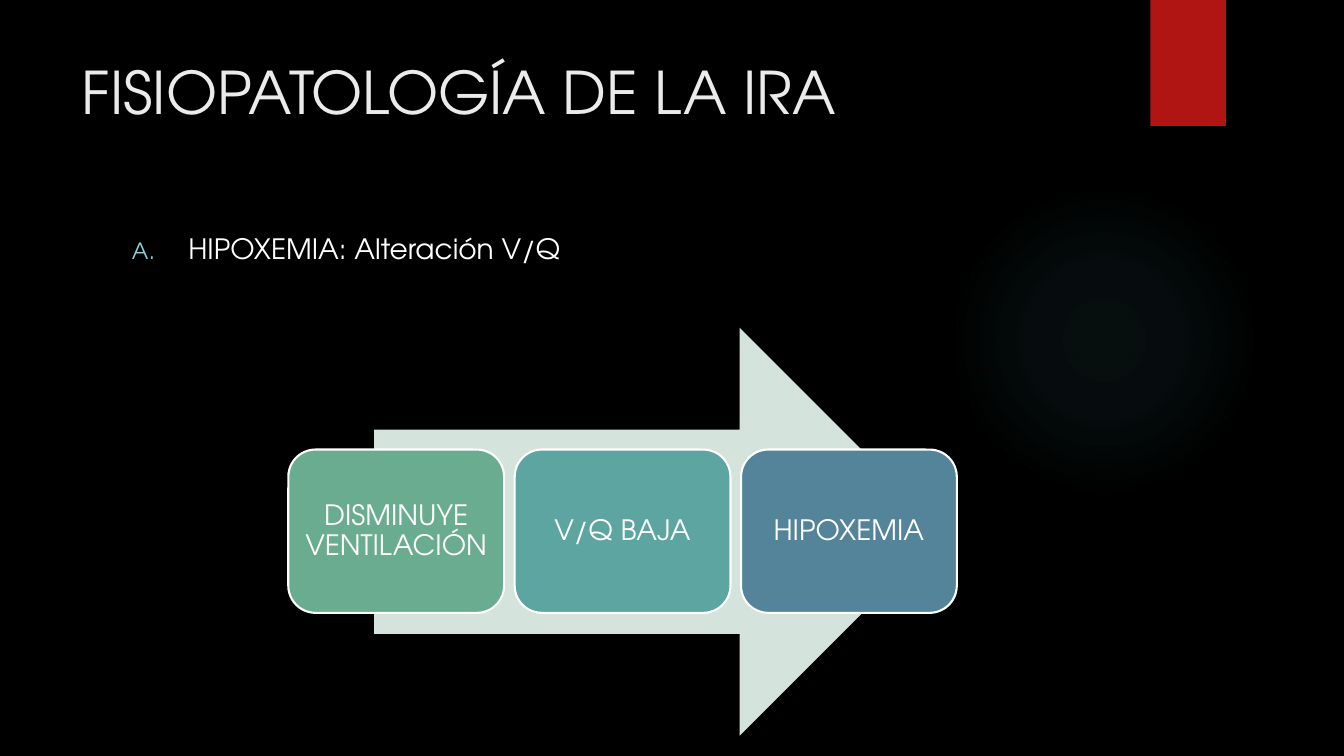
import pptx
import pptx.util
import pptx.dml.color
import pptx.enum.shapes
import pptx.enum.text
import pptx.oxml
import pptx.oxml.ns

Inches, Pt = pptx.util.Inches, pptx.util.Pt
KIND = pptx.enum.shapes.MSO_SHAPE
ALIGN = pptx.enum.text.PP_ALIGN
ANCHOR = pptx.enum.text.MSO_ANCHOR

# Content
TITLE = "FISIOPATOLOGÍA DE LA IRA"
POINT = "HIPOXEMIA: Alteración V/Q"
STEPS = [
    ("DISMINUYE VENTILACIÓN", "6AAC90"),
    ("V/Q BAJA", "5DA5A1"),
    ("HIPOXEMIA", "54849A"),
]
FONT = "TeX Gyre Adventor"
GLOW = [(0, 7), (36, 6), (69, 0)]  # stop and opacity, in percent

# Layout of the steps, in inches
LEFT, TOP, WIDE, HIGH, PITCH = 2.86, 4.46, 2.14, 1.62, 2.245


def color(code):
    return pptx.dml.color.RGBColor.from_string(code)


def parse(tag, inner="", attrs=""):
    ns = pptx.oxml.ns.nsdecls("a")
    return pptx.oxml.parse_xml(f"<a:{tag} {ns} {attrs}>{inner}</a:{tag}>")


def write(shape, text, size=20, ink="FFFFFF", align=ALIGN.LEFT,
          anchor=ANCHOR.TOP, inset=None, space=None, bullets=()):
    frame = shape.text_frame
    frame.word_wrap = True
    frame.auto_size = pptx.enum.text.MSO_AUTO_SIZE.NONE
    frame.vertical_anchor = anchor
    if inset is not None:
        frame.margin_left = frame.margin_right = Inches(inset)
        frame.margin_top = frame.margin_bottom = Inches(inset)
    para = frame.paragraphs[0]
    para.alignment = align
    if space:
        para.line_spacing = space
    props = para._p.get_or_add_pPr()
    for item in bullets:
        props.append(item)
    run = para.add_run()
    run.text = text
    run.font.name, run.font.size = FONT, Pt(size)
    run.font.color.rgb = color(ink)
    return para


def draw(slide, kind, box, fill, line=None):
    shape = slide.shapes.add_shape(kind, *map(Inches, box))
    shape.shadow.inherit = False
    shape.fill.solid()
    shape.fill.fore_color.rgb = color(fill)
    if line:
        shape.line.color.rgb = color(line)
        shape.line.width = Pt(1.5)
    else:
        shape.line.fill.background()
    return shape


def main():
    deck = pptx.Presentation()
    deck.slide_width, deck.slide_height = Inches(13.33), Inches(7.5)
    slide = deck.slides.add_slide(deck.slide_layouts[5])
    slide.background.fill.solid()
    slide.background.fill.fore_color.rgb = color("000000")

    # Soft glow and red tab
    glow = draw(slide, KIND.OVAL, (9.41, 1.83, 3.08, 3.08), "50B9C1")
    stops = "".join(
        f'<a:gs pos="{pos * 1000}"><a:srgbClr val="50B9C1">'
        f'<a:alpha val="{alpha * 1000}"/></a:srgbClr></a:gs>'
        for pos, alpha in GLOW)
    center = '<a:fillToRect l="50000" t="50000" r="50000" b="50000"/>'
    fade = parse("gradFill", f'<a:gsLst>{stops}</a:gsLst>'
                 f'<a:path path="circle">{center}</a:path>')
    props = glow._element.spPr
    props.replace(props.find(pptx.oxml.ns.qn("a:solidFill")), fade)
    draw(slide, KIND.RECTANGLE, (11.41, 0, 0.75, 1.25), "B01513")

    # Title
    title = slide.shapes.title
    title.left, title.top = Inches(0.71), Inches(0.5)
    title.width, title.height = Inches(10.29), Inches(1.53)
    write(title, TITLE, size=42, ink="EBEBEB")

    # Lettered point
    body = slide.shapes.add_textbox(*map(Inches, (1.21, 2.25, 9.78, 0.6)))
    para = write(body, POINT, bullets=[
        parse("buClr", '<a:srgbClr val="8AD0D6"/>'),
        parse("buSzPct", attrs='val="80000"'),
        parse("buFont", attrs=f'typeface="{FONT}"'),
        parse("buAutoNum", attrs='type="alphaUcPeriod"'),
    ])
    props = para._p.get_or_add_pPr()
    props.set("marL", str(Inches(0.56)))
    props.set("indent", str(Inches(-0.56)))

    # Arrow with the steps over it
    draw(slide, KIND.RIGHT_ARROW, (3.71, 3.25, 5.65, 4.05), "D4E3DB")
    for i, (text, fill) in enumerate(STEPS):
        step = draw(slide, KIND.ROUNDED_RECTANGLE,
                    (LEFT + i * PITCH, TOP, WIDE, HIGH), fill, line="FFFFFF")
        write(step, text, align=ALIGN.CENTER, anchor=ANCHOR.MIDDLE,
              inset=0.08, space=0.9)

    deck.save("out.pptx")


if __name__ == "__main__":
    main()
